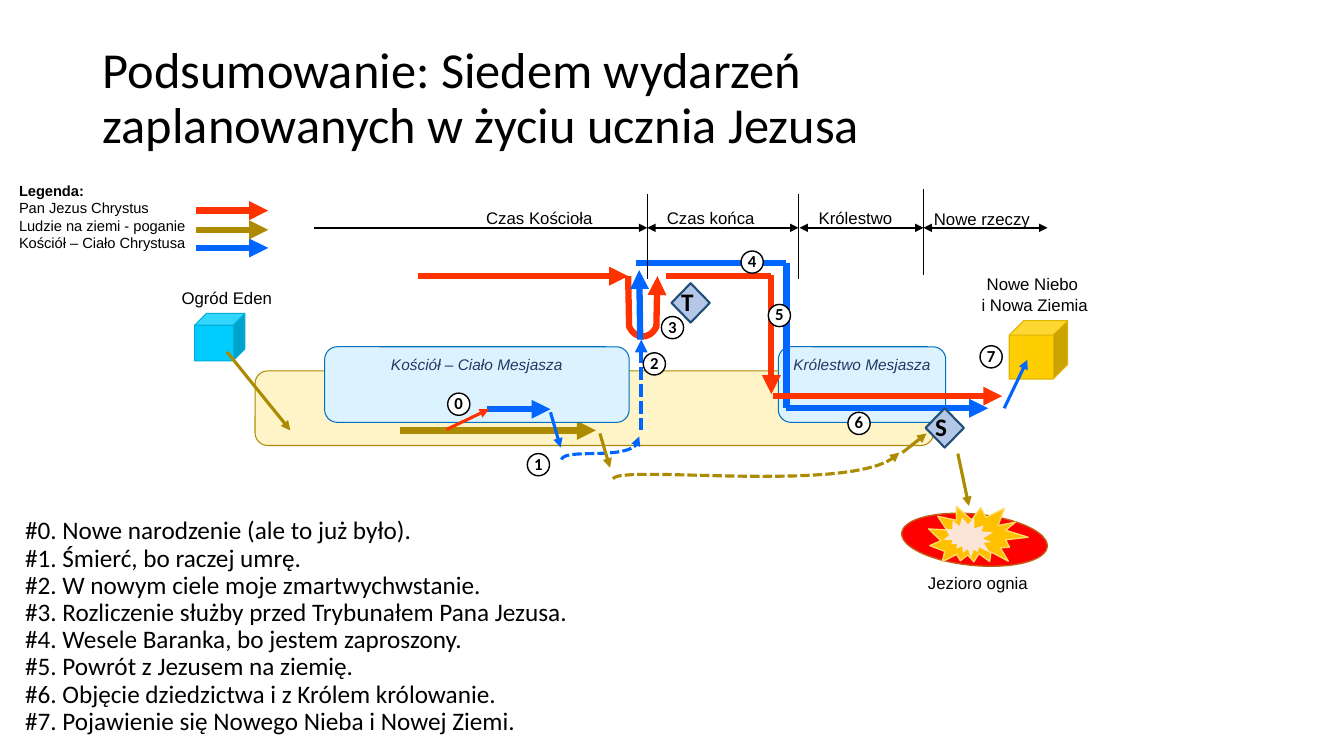
from lxml.etree import SubElement
from pptx import Presentation
from pptx.dml.color import RGBColor
from pptx.enum.dml import MSO_LINE
from pptx.enum.shapes import MSO_CONNECTOR, MSO_SHAPE as Preset
from pptx.enum.text import MSO_ANCHOR as Anchor, PP_ALIGN as Align
from pptx.oxml.ns import qn
from pptx.util import Inches, Pt

BLACK = RGBColor(0, 0, 0)
WHITE = RGBColor(0xFF, 0xFF, 0xFF)
RED = RGBColor(0xFF, 0x33, 0x00)
BLUE = RGBColor(0x00, 0x66, 0xFF)
OLIVE = RGBColor(0xAD, 0x8B, 0x00)
SAND = RGBColor(0xFF, 0xF4, 0xC7)
SKY = RGBColor(0xDD, 0xF2, 0xFF)
SKY_EDGE = RGBColor(0x00, 0x70, 0xC0)
NAVY = RGBColor(0x20, 0x38, 0x64)
STEEL = RGBColor(0xB4, 0xC7, 0xE7)
STEEL_EDGE = RGBColor(0x1F, 0x4E, 0x79)
GOLD = RGBColor(0xFF, 0xCE, 0x00)
GOLD_EDGE = RGBColor(0xE0, 0xB4, 0x00)
CYAN = RGBColor(0x00, 0xCC, 0xFF)
CYAN_EDGE = RGBColor(0x00, 0xAE, 0xD8)
FIRE = RGBColor(0xFF, 0x00, 0x00)
FIRE_EDGE = RGBColor(0xC5, 0x5A, 0x11)
FLAME = RGBColor(0xFF, 0xC0, 0x00)
FLAME_EDGE = RGBColor(0xFF, 0xD9, 0x66)
GLOW = RGBColor(0xFB, 0xE5, 0xD6)

CELL = Inches(0.1)  # one column or row of the grid
THICK, MEDIUM, THIN = 4.5, 2.25, 0.5


def grid(*cells):
    return [round(CELL * cell) for cell in cells]


def bezier(start, first, second, end, steps=24):
    """Points along a cubic curve, both ends included."""
    points = []
    for step in range(steps + 1):
        t = step / steps
        weights = ((1 - t) ** 3, 3 * t * (1 - t) ** 2, 3 * t * t * (1 - t), t ** 3)
        points.append(tuple(sum(w * p[axis] for w, p in zip(weights, (start, first, second, end)))
                            for axis in (0, 1)))
    return points


class Sketch:
    heading, plain = "Calibri", "Arial"

    def __init__(self, page):
        self.page = page

    def typeset(self, box, lines, size, font, color=BLACK, align=Align.LEFT, anchor=Anchor.TOP,
                inset=None, wrap=True, spacing=1.0, bold=None, italic=None):
        frame = box.text_frame
        frame.word_wrap = wrap
        frame.vertical_anchor = anchor
        if inset is not None:
            frame.margin_left = frame.margin_right = Inches(inset[0])
            frame.margin_top = frame.margin_bottom = Inches(inset[1])
        for index, line in enumerate(lines):
            para = frame.add_paragraph() if index else frame.paragraphs[0]
            para.text = line
            para.alignment = align
            para.line_spacing = spacing
            para.font.name, para.font.size = font, Pt(size)
            para.font.color.rgb = color
            para.font.bold, para.font.italic = bold, italic
        return frame

    def text(self, place, lines, size, font, **style):
        box = self.page.shapes.add_textbox(*grid(*place))
        return self.typeset(box, lines, size, font, **style)

    def label(self, place, words):
        self.text(place, [words], 12, self.plain, align=Align.CENTER,
                  anchor=Anchor.MIDDLE, inset=(0.03, 0.03))

    def shape(self, preset, place, fill, edge=None, width=0.75, turn=0):
        shape = self.page.shapes.add_shape(preset, *grid(*place))
        shape.shadow.inherit = False
        shape.fill.solid()
        shape.fill.fore_color.rgb = fill
        shape.rotation = turn
        if edge is None:
            shape.line.fill.background()
        else:
            self.stroke(shape, edge, width)
        return shape

    def realm(self, place, words):
        box = self.shape(Preset.ROUNDED_RECTANGLE, place, SKY, SKY_EDGE)
        self.typeset(box, [words], 11, self.plain, NAVY, Align.CENTER, wrap=False, italic=True)

    def judgement(self, left, top, letter):
        box = self.shape(Preset.DIAMOND, (left, top, 3.8, 3.9), STEEL, STEEL_EDGE, 1.5)
        self.typeset(box, [letter], 18, self.heading, anchor=Anchor.MIDDLE,
                     inset=(0, 0.04), spacing=0.9, bold=True)

    def badge(self, left, top, number):
        box = self.shape(Preset.OVAL, (left, top, 2.2, 2.2), WHITE, BLACK, 1)
        self.typeset(box, [str(number)], 12, self.heading, align=Align.CENTER,
                     anchor=Anchor.MIDDLE, wrap=False, spacing=0.9, bold=True)

    def stroke(self, item, color, width, ends="", dashed=False):
        item.line.color.rgb = color
        item.line.width = Pt(width)
        if dashed:
            item.line.dash_style = MSO_LINE.SQUARE_DOT
        outline = item.element.spPr.find(qn("a:ln"))
        for end in ends.split():
            SubElement(outline, qn(f"a:{end}End"), type="triangle")

    def line(self, start, finish, color, width=THICK, ends="tail", dashed=False):
        link = self.page.shapes.add_connector(MSO_CONNECTOR.STRAIGHT, *grid(*start, *finish))
        self.stroke(link, color, width, ends, dashed)
        SubElement(link.element.spPr, qn("a:effectLst"))

    def curve(self, points, color, width=MEDIUM, dashed=True):
        first, *rest = [grid(*point) for point in points]
        builder = self.page.shapes.build_freeform(*first)
        builder.add_line_segments(rest, close=False)
        shape = builder.convert_to_shape()
        shape.shadow.inherit = False
        shape.fill.background()
        self.stroke(shape, color, width, "tail", dashed)


def main():
    deck = Presentation()
    deck.slide_width, deck.slide_height = Inches(13.33), Inches(7.5)
    page = deck.slides.add_slide(deck.slide_layouts[6])
    sketch = Sketch(page)

    # Earth, realms and title
    earth = sketch.shape(Preset.ROUNDED_RECTANGLE, (25.3, 36.8, 67.3, 7.4), SAND, OLIVE)
    earth.adjustments[0] = 0.17
    sketch.realm((77.2, 34.4, 16.6, 7.5), "Królestwo Mesjasza")
    sketch.text((9.2, 4, 115, 7.8),
                ["Podsumowanie: Siedem wydarzeń \nzaplanowanych w życiu ucznia Jezusa"],
                36, sketch.heading, spacing=0.9)
    sketch.line((39.7, 42.7), (59.1, 42.7), OLIVE)
    sketch.realm((32.2, 34.4, 30.2, 7.5), "Kościół – Ciało Mesjasza")

    # Ways of Christ and the Church
    sketch.line((41.5, 27.4), (62.3, 27.4), RED)
    sketch.line((48.3, 40.6), (54.6, 40.6), BLUE)
    sketch.line((63.1, 26.1), (78, 26.1), BLUE, ends="")
    bend = bezier((62.4, 32.4), (63, 33.7), (64.5, 33.7), (65.1, 32.4))
    sketch.curve([(62.3, 27.4), *bend, (65.2, 27.4)], RED, THICK, dashed=False)
    sketch.line((76.5, 27.3), (76.5, 39.1), RED)
    sketch.line((66.1, 27.4), (76.5, 27.4), RED, ends="")
    sketch.line((78, 26.1), (78, 40.5), BLUE, ends="")
    sketch.line((76.7, 39.3), (99.4, 39.3), RED)
    sketch.line((78, 40.5), (98, 40.5), BLUE)
    sketch.curve(bezier((55.7, 45.6), (56, 44.3), (63.5, 46), (63.4, 43.3)), BLUE)
    sketch.line((63.5, 33.7), (63.4, 26.8), BLUE)
    sketch.line((63.6, 42.7), (63.6, 33.7), BLUE, 3, dashed=True)

    # Timeline
    for left, right, ends in ((31.1, 64.2, "tail"), (64.2, 79.2, "head tail"),
                              (79.3, 91.6, "head tail"), (91.6, 103.9, "head tail")):
        sketch.line((left, 22.6), (right, 22.6), BLACK, 1.5, ends)
    for column, top in ((64.2, 19.2), (79.2, 19.2), (91.6, 18.8)):
        sketch.line((column, top), (column, top + 8.5), BLACK, THIN, "")
    for left, top, width, era in ((46.3, 20.3, 14.4, "Czas Kościoła"),
                                  (64.8, 20.3, 11.4, "Czas końca"),
                                  (80.2, 20.3, 9.3, "Królestwo"),
                                  (91.6, 20.4, 11.6, "Nowe rzeczy")):
        sketch.label((left, top, width, 2.6), era)

    # Deaths and judgements
    sketch.curve(bezier((60.8, 47.5), (61.5, 46), (85.7, 49.2), (89.2, 44.9)), OLIVE)
    sketch.line((89.5, 44.9), (91.9, 43), OLIVE, MEDIUM)
    sketch.line((59.5, 43), (60.5, 46.4), OLIVE, MEDIUM)
    sketch.line((54.6, 40.9), (55.6, 44.4), BLUE, MEDIUM)
    sketch.judgement(66.6, 28.1, "T")
    sketch.judgement(91.8, 40.5, "S")
    sketch.line((95, 45), (96.1, 50.2), OLIVE, MEDIUM)

    # Lake of fire
    sketch.label((89.8, 56.5, 14.4, 2.6), "Jezioro ognia")
    sketch.shape(Preset.FLOWCHART_CONNECTOR, (89.4, 51, 14.5, 5.1), FIRE, FIRE_EDGE, 1, 5.4)
    sketch.shape(Preset.EXPLOSION2, (92.1, 49.8, 9.7, 6.8), FLAME, FLAME_EDGE, 1, 16.2)
    sketch.shape(Preset.EXPLOSION2, (93.8, 51.1, 4.7, 4.5), GLOW, turn=56.2)

    # Eden and the new earth
    sketch.shape(Preset.CUBE, (100.1, 31.8, 5.8, 5.8), GOLD, GOLD_EDGE)
    sketch.line((99.6, 40.5), (101.9, 35.7), BLUE, MEDIUM)
    sketch.shape(Preset.CUBE, (19.3, 31.1, 5, 4.7), CYAN, CYAN_EDGE)
    sketch.line((44.3, 42.6), (48.5, 40.6), RED, MEDIUM)
    sketch.line((22.5, 34.9), (28.8, 42.7), OLIVE, MEDIUM)
    sketch.label((15.3, 28.2, 14.4, 2.6), "Ogród Eden")
    sketch.label((95.2, 26.9, 14.4, 4.6), "Nowe Niebo\n i Nowa Ziemia")

    # Numbered events
    for number, (left, top) in enumerate(((44.4, 39), (52.3, 45), (63.8, 35), (65.6, 31.4),
                                          (73.5, 24.9), (76.2, 30.2), (84.1, 40.9), (97.2, 34.3))):
        sketch.badge(left, top, number)
    events = ("Nowe narodzenie (ale to już było).",
              "Śmierć, bo raczej umrę.",
              "W nowym ciele moje zmartwychwstanie.",
              "Rozliczenie służby przed Trybunałem Pana Jezusa.",
              "Wesele Baranka, bo jestem zaproszony.",
              "Powrót z Jezusem na ziemię.",
              "Objęcie dziedzictwa i z Królem królowanie.",
              "Pojawienie się Nowego Nieba i Nowej Ziemi.")
    listing = "\n".join(f"#{number}. {event}" for number, event in enumerate(events))
    sketch.text((1.5, 50.9, 86.2, 22.3), [listing], 18, sketch.heading, spacing=0.9)

    # Legend
    for row, color in ((24.6, BLUE), (22.8, OLIVE), (20.9, RED)):
        sketch.line((19.4, row), (26.6, row), color)
    legend = sketch.text((0.9, 17.5, 19.9, 8.1),
                         ["Legenda:", "Pan Jezus Chrystus", "Ludzie na ziemi - poganie",
                          "Kościół – Ciało Chrystusa"], 10.5, sketch.plain)
    legend.paragraphs[0].font.bold = True

    deck.save("out.pptx")


if __name__ == "__main__":
    main()
